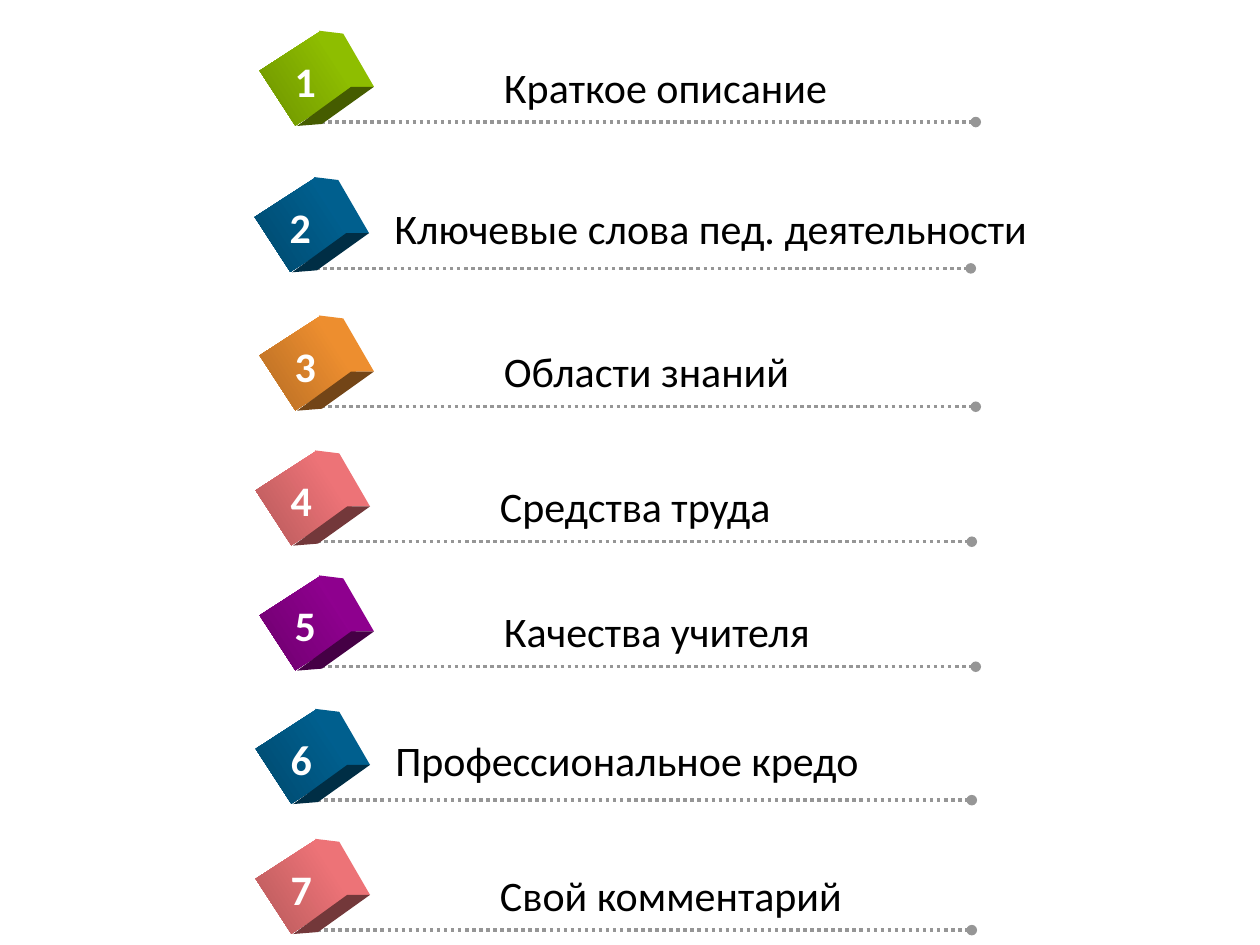
from lxml import etree
from pptx import Presentation
from pptx.dml.color import RGBColor
from pptx.enum.dml import MSO_LINE
from pptx.enum.shapes import MSO_CONNECTOR, MSO_SHAPE
from pptx.enum.text import MSO_AUTO_SIZE
from pptx.oxml.ns import qn
from pptx.util import Cm, Pt

STRAIGHT = MSO_CONNECTOR.STRAIGHT
RECTANGLE = MSO_SHAPE.RECTANGLE
DOTTED = MSO_LINE.ROUND_DOT
FIT_SHAPE = MSO_AUTO_SIZE.SHAPE_TO_FIT_TEXT

BLACK = RGBColor(0x00, 0x00, 0x00)
WHITE = RGBColor(0xFF, 0xFF, 0xFF)
GREY = RGBColor(0x96, 0x96, 0x96)
GREEN = RGBColor(0x99, 0xCC, 0x00)
BLUE = RGBColor(0x00, 0x66, 0x99)
ORANGE = RGBColor(0xFF, 0x99, 0x33)
PINK = RGBColor(0xFF, 0x7C, 0x80)
PURPLE = RGBColor(0x99, 0x00, 0x99)

FAR_INDENT, FAR_DROP = 4.37, 0.25
NEAR_INDENT, NEAR_DROP = 2.26, 0.15

RIGHT_SIDE = [(0.89, -0.24), (1.38, -0.18), (2.0, 0.89), (1.54, 0.89)]
BOTTOM_SIDE = [(1.54, 0.89), (2.0, 0.89), (0.95, 1.64), (0.45, 1.68)]

ITEMS = [
    ("Краткое описание", GREEN, 5.54, 0.86, 7.09, FAR_INDENT, FAR_DROP),
    ("Ключевые слова пед. деятельности", BLUE, 5.44, 3.81, 13.39, NEAR_INDENT, NEAR_DROP),
    ("Области знаний", ORANGE, 5.54, 6.6, 6.32, FAR_INDENT, FAR_DROP),
    ("Средства труда", PINK, 5.46, 9.32, 6.02, FAR_INDENT, FAR_DROP),
    ("Качества учителя", PURPLE, 5.54, 11.84, 6.73, FAR_INDENT, FAR_DROP),
    ("Профессиональное кредо", BLUE, 5.46, 14.53, 9.93, NEAR_INDENT, NEAR_DROP),
    ("Свой комментарий", PINK, 5.46, 17.15, 7.47, FAR_INDENT, FAR_DROP),
]


def shade(color, factor):
    """Return the colour darkened by a factor."""
    return RGBColor(*(round(channel * factor) for channel in color))


def add_text(shapes, text, left, top, width, height, color=BLACK, bold=False):
    """Add one line of text that does not wrap."""
    box = shapes.add_textbox(Cm(left), Cm(top), Cm(width), Cm(height))
    frame = box.text_frame
    frame.word_wrap = False
    frame.auto_size = FIT_SHAPE
    run = frame.paragraphs[0].add_run()
    run.text = text
    run.font.name = "Calibri"
    run.font.size = Pt(24)
    run.font.bold = bold
    run.font.color.rgb = color


def add_underline(shapes, left, top):
    """Add the dotted rule with a round end."""
    rule = shapes.add_connector(STRAIGHT, Cm(left), Cm(top), Cm(left + 13.34), Cm(top))
    rule.line.color.rgb = GREY
    rule.line.width = Pt(2)
    rule.line.dash_style = DOTTED
    outline = rule.line._get_or_add_ln()
    etree.SubElement(outline, qn("a:tailEnd"), type="oval")
    etree.SubElement(rule._element.spPr, qn("a:effectLst"))


def add_side(shapes, corners, left, top, color):
    """Add one side face of a cube."""
    points = [(Cm(left + x), Cm(top + y)) for x, y in corners]
    builder = shapes.build_freeform(*points[0])
    builder.add_line_segments(points[1:], close=True)
    side = builder.convert_to_shape()
    side.shadow.inherit = False
    side.fill.solid()
    side.fill.fore_color.rgb = color
    side.line.fill.background()


def add_cube(shapes, left, top, color):
    """Add a tilted cube with a shaded front face."""
    front = shapes.add_shape(RECTANGLE, Cm(left), Cm(top), Cm(1.32), Cm(1.45))
    front.rotation = 57
    front.shadow.inherit = False
    front.line.fill.background()
    front.fill.gradient()
    front.fill.gradient_angle = 270
    bright, dark = front.fill.gradient_stops
    bright.color.rgb, bright.position = color, 0
    dark.color.rgb, dark.position = shade(color, 0.714), 1
    add_side(shapes, RIGHT_SIDE, left, top, shade(color, 0.93))
    add_side(shapes, BOTTOM_SIDE, left, top, shade(color, 0.45))


def add_item(slide, number, label, color, left, top, width, indent, drop):
    """Add one numbered entry as a group."""
    shapes = slide.shapes.add_group_shape().shapes
    add_underline(shapes, left + 0.79, top + 1.6)
    add_cube(shapes, left, top, color)
    add_text(shapes, label, left + indent, top + drop, width, 1.3)
    add_text(shapes, str(number), left + 0.15, top + 0.13, 0.99, 1.27,
             color=WHITE, bold=True)


def main():
    """Build the numbered contents slide."""
    deck = Presentation()
    deck.slide_width, deck.slide_height = Cm(25.4), Cm(19.05)
    slide = deck.slides.add_slide(deck.slide_layouts[6])
    for number, item in enumerate(ITEMS, start=1):
        add_item(slide, number, *item)
    deck.save("out.pptx")


if __name__ == "__main__":
    main()
